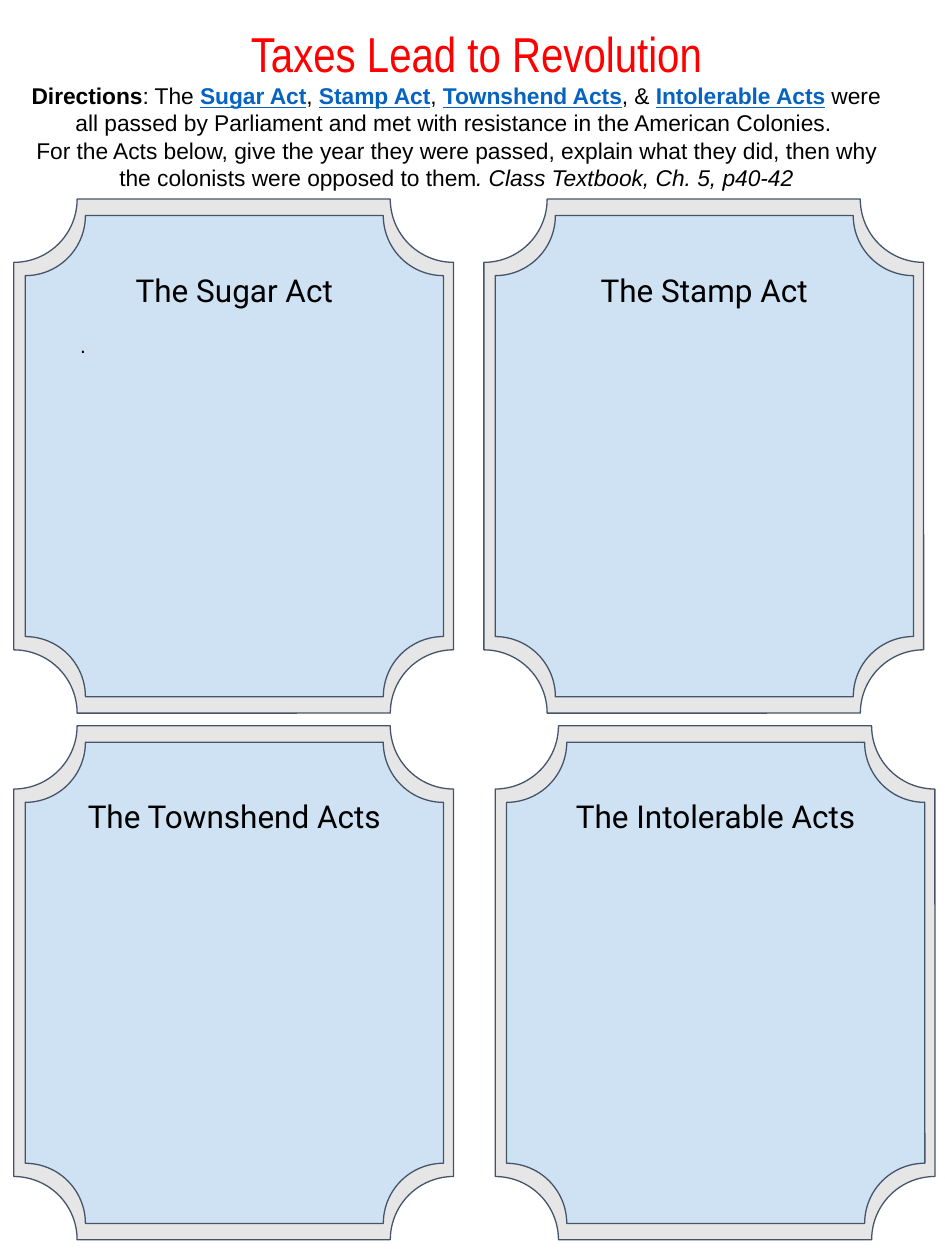
from pptx import Presentation
from pptx.dml.color import RGBColor
from pptx.enum.shapes import MSO_SHAPE
from pptx.enum.text import MSO_ANCHOR, PP_ALIGN
from pptx.util import Inches, Pt

PLAQUE = MSO_SHAPE.PLAQUE
TOP = MSO_ANCHOR.TOP
LEFT, CENTER = PP_ALIGN.LEFT, PP_ALIGN.CENTER

RED = RGBColor(0xFF, 0x00, 0x00)
BLACK = RGBColor(0x00, 0x00, 0x00)
LINK = RGBColor(0x05, 0x63, 0xC1)
GREY = RGBColor(0xE7, 0xE6, 0xE6)
BLUE = RGBColor(0xCF, 0xE2, 0xF3)
SLATE = RGBColor(0x44, 0x54, 0x6A)

ACTS = ["Sugar Act", "Stamp Act", "Townshend Acts", "Intolerable Acts"]
GAPS = [", ", ", ", ", & ",
        " were all passed by Parliament and met with resistance in the American Colonies. "]


def add_run(para, text, size, font="Arial", color=BLACK, bold=False, italic=False, under=False):
    run = para.add_run()
    run.text = text
    face = run.font
    face.size, face.name = Pt(size), font
    face.bold, face.italic, face.underline = bold, italic, under
    face.color.rgb = color


def set_frame(shape, pad):
    """Wrap the text from the top, with the given padding above and below."""
    frame = shape.text_frame
    frame.word_wrap = True
    frame.vertical_anchor = TOP
    frame.margin_left = frame.margin_right = Inches(0.1)
    frame.margin_top = frame.margin_bottom = Inches(pad)
    frame.paragraphs[0].alignment = CENTER
    return frame


def add_box(slide, box, pad):
    shape = slide.shapes.add_textbox(*[Inches(v) for v in box])
    return set_frame(shape, pad)


def add_title(slide, box):
    frame = add_box(slide, box, 0.05)
    add_run(frame.paragraphs[0], "Taxes Lead to Revolution", 28, "Arial Narrow", RED)


def add_guide(slide, box):
    """Directions: the named acts, then the task."""
    frame = add_box(slide, box, 0.1)
    intro = frame.paragraphs[0]
    add_run(intro, "Directions", 13, bold=True)
    add_run(intro, ": The ", 13)
    for act, gap in zip(ACTS, GAPS):
        add_run(intro, act, 13, color=LINK, bold=True, under=True)
        add_run(intro, gap, 13)
    task = frame.add_paragraph()
    task.alignment = CENTER
    add_run(task, "For the Acts below, give the year they were passed, explain what they did, "
                  "then why the colonists were opposed to them", 13)
    add_run(task, ". Class Textbook, Ch. 5, p40-42", 13, italic=True)


def add_plaque(slide, box, fill):
    shape = slide.shapes.add_shape(PLAQUE, *[Inches(v) for v in box])
    shape.adjustments[0] = 0.144
    shape.shadow.inherit = False
    shape.fill.solid()
    shape.fill.fore_color.rgb = fill
    shape.line.color.rgb = SLATE
    shape.line.width = Pt(0.75)
    return shape


def add_card(slide, box, act, note=None):
    """A blue plaque centred in a grey one, with a heading and an optional note."""
    left, top, width, height = box
    add_plaque(slide, box, GREY)
    inner = add_plaque(slide, (left + 0.09, top + 0.13, width - 0.17, height - 0.26), BLUE)
    frame = set_frame(inner, 0.1)
    add_run(frame.paragraphs[0], f"The {act}", 18, "Roboto")
    if note:
        para = frame.add_paragraph()
        para.alignment = LEFT
        para.space_before = Pt(14)
        add_run(para, note, 12)


def main():
    deck = Presentation()
    deck.slide_width, deck.slide_height = Inches(7.5), Inches(10)
    slide = deck.slides.add_slide(deck.slide_layouts[6])
    add_title(slide, (0.43, 0.14, 6.7, 0.57))
    add_guide(slide, (0.1, 0.55, 7.04, 1.04))
    spots = [(0.11, 1.58), (3.84, 1.58), (0.11, 5.76), (3.93, 5.76)]
    notes = [".", None, None, None]
    for (left, top), act, note in zip(spots, ACTS, notes):
        add_card(slide, (left, top, 3.49, 4.08), act, note)
    deck.save("out.pptx")


if __name__ == "__main__":
    main()
